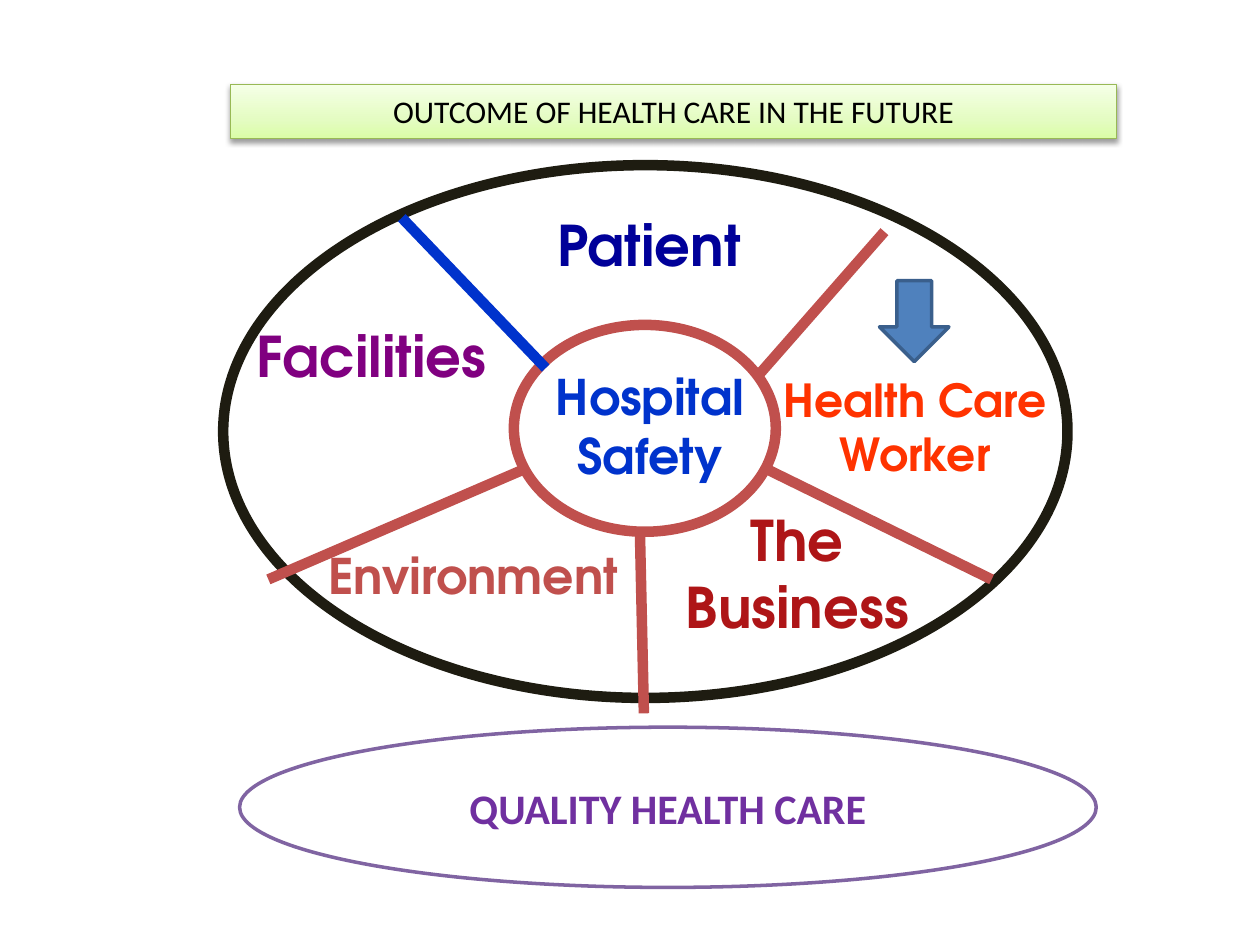
from dataclasses import dataclass

import lxml.etree
import pptx
import pptx.dml.color
import pptx.enum.dml
import pptx.enum.shapes
import pptx.enum.text
import pptx.oxml.ns
import pptx.util

Cm, Pt = pptx.util.Cm, pptx.util.Pt
RGB = pptx.dml.color.RGBColor.from_string
qn = pptx.oxml.ns.qn
SHAPE = pptx.enum.shapes.MSO_SHAPE
ALIGN = pptx.enum.text.PP_ALIGN
ANCHOR = pptx.enum.text.MSO_ANCHOR


@dataclass(frozen=True)
class Theme:
    wheel_font: str = "TeX Gyre Adventor"
    body_font: str = "Calibri"
    title_size: int = 18
    quality_size: int = 24
    worker_size: int = 26
    small_size: int = 28
    large_size: int = 32
    white: str = "FFFFFF"
    black: str = "000000"
    rim: str = "1E1C11"
    red: str = "C0504D"
    blue: str = "0033CC"
    navy: str = "000099"
    orange: str = "FF3300"
    purple: str = "800080"
    crimson: str = "AE1517"
    violet: str = "7030A0"
    violet_line: str = "8064A2"
    arrow: str = "4F81BD"
    arrow_line: str = "3A5F8C"
    banner_line: str = "98B955"
    banner_stops: tuple = ((0, "DAFDA7"), (35, "E4FCC2"), (100, "F5FFE7"))


T = Theme()


@dataclass(frozen=True)
class Box:
    left: float
    top: float
    width: float
    height: float

    def lengths(self) -> tuple:
        return Cm(self.left), Cm(self.top), Cm(self.width), Cm(self.height)


@dataclass(frozen=True)
class Spoke:
    start: tuple[float, float]
    end: tuple[float, float]
    color: str = T.red


@dataclass(frozen=True)
class Label:
    box: Box
    lines: tuple[str, ...]
    size: int
    color: str
    align: ALIGN = ALIGN.CENTER


SPOKES = (
    Spoke((15.24, 7.62), (17.83, 4.67)),
    Spoke((11, 7.42), (8.1, 4.39), T.blue),
    Spoke((15.44, 9.45), (19.99, 11.68)),
    Spoke((10.59, 9.45), (5.41, 11.68)),
    Spoke((12.9, 10.72), (12.98, 14.38)),
)

LABELS = (
    Label(Box(10.92, 7.26, 4.37, 2.64), ("Hospital", "Safety"), T.small_size, T.blue),
    Label(Box(10.97, 4.11, 4.24, 1.63), ("Patient",), T.large_size, T.navy),
    Label(Box(14.4, 7.37, 8.1, 2.49), ("Health Care", "Worker"), T.worker_size, T.orange),
    Label(Box(3.58, 6.35, 6.48, 1.63), ("Facilities",), T.large_size, T.purple, ALIGN.RIGHT),
    Label(Box(6.3, 10.87, 6.48, 1.45), ("Environment",), T.small_size, T.red),
    Label(Box(13.56, 10.06, 5.03, 3), ("The", "Business"), T.large_size, T.crimson),
)


def write_lines(tf, lines: tuple[str, ...], font: str, size: int, color: str,
                bold: bool = True, align: ALIGN = ALIGN.CENTER) -> None:
    tf.word_wrap = True
    for i, line in enumerate(lines):
        p = tf.paragraphs[0] if i == 0 else tf.add_paragraph()
        p.alignment = align
        r = p.add_run()
        r.text = line
        r.font.name, r.font.size, r.font.bold = font, Pt(size), bold
        r.font.color.rgb = RGB(color)


def set_line(sp, color: str, width: float) -> None:
    sp.line.color.rgb = RGB(color)
    sp.line.width = Pt(width)


def add_shape(s, kind: SHAPE, box: Box, fill: str | None, line: str, width: float):
    sp = s.shapes.add_shape(kind, *box.lengths())
    sp.shadow.inherit = False
    if fill:
        sp.fill.solid()
        sp.fill.fore_color.rgb = RGB(fill)
    else:
        sp.fill.background()
    set_line(sp, line, width)
    return sp


def add_spoke(s, spoke: Spoke) -> None:
    ends = [Cm(v) for v in spoke.start + spoke.end]
    line = s.shapes.add_connector(pptx.enum.shapes.MSO_CONNECTOR.STRAIGHT, *ends)
    set_line(line, spoke.color, 6)
    lxml.etree.SubElement(line.element.spPr, qn("a:effectLst"))


def add_label(s, label: Label) -> None:
    sp = s.shapes.add_textbox(*label.box.lengths())
    write_lines(sp.text_frame, label.lines, T.wheel_font, label.size, label.color,
                align=label.align)


def add_color(parent, color: str):
    return lxml.etree.SubElement(parent, qn("a:srgbClr"), val=color)


def format_title(sp) -> None:
    """Turn the title placeholder into a gradient banner with a soft shadow."""
    sp.left, sp.top, sp.width, sp.height = Box(4.65, 1.7, 17.86, 1.09).lengths()
    sp.fill.gradient()
    sp.fill.gradient_angle = 90
    stops = sp.element.spPr.find(".//" + qn("a:gsLst"))
    for stop in list(stops):
        stops.remove(stop)
    for pos, color in T.banner_stops:
        add_color(lxml.etree.SubElement(stops, qn("a:gs"), pos=str(pos * 1000)), color)
    set_line(sp, T.banner_line, 0.75)

    sp.shadow.inherit = False
    effects = sp.element.spPr.find(qn("a:effectLst"))
    shadow = lxml.etree.SubElement(
        effects, qn("a:outerShdw"), blurRad=str(Pt(3.1)), dist=str(Pt(1.6)),
        dir="5400000", rotWithShape="0")
    lxml.etree.SubElement(add_color(shadow, T.black), qn("a:alpha"), val="38000")

    tf = sp.text_frame
    tf.auto_size = pptx.enum.text.MSO_AUTO_SIZE.NONE
    tf.vertical_anchor = ANCHOR.MIDDLE
    tf.margin_top = tf.margin_bottom = Cm(0.15)
    write_lines(tf, ("OUTCOME OF HEALTH CARE IN THE FUTURE",), T.body_font,
                T.title_size, T.black, bold=False)


def main() -> None:
    prs = pptx.Presentation()
    prs.slide_width, prs.slide_height = Cm(25.4), Cm(19.05)
    s = prs.slides.add_slide(prs.slide_layouts.get_by_name("Title Only"))
    format_title(s.shapes.title)

    add_shape(s, SHAPE.OVAL, Box(4.5, 3.33, 17.02, 10.74), T.white, T.rim, 6)
    add_shape(s, SHAPE.OVAL, Box(10.36, 6.55, 5.28, 4.17), None, T.red, 6)
    for spoke in SPOKES:
        add_spoke(s, spoke)
    for label in LABELS:
        add_label(s, label)

    quality = add_shape(s, SHAPE.OVAL, Box(4.83, 14.66, 17.27, 3.23), T.white,
                        T.violet_line, 2)
    quality.text_frame.vertical_anchor = ANCHOR.MIDDLE
    write_lines(quality.text_frame, ("QUALITY HEALTH CARE",), T.body_font,
                T.quality_size, T.violet)
    add_shape(s, SHAPE.DOWN_ARROW, Box(17.73, 5.66, 1.4, 1.63), T.arrow, T.arrow_line, 2)
    prs.save("out.pptx")


if __name__ == "__main__":
    main()
